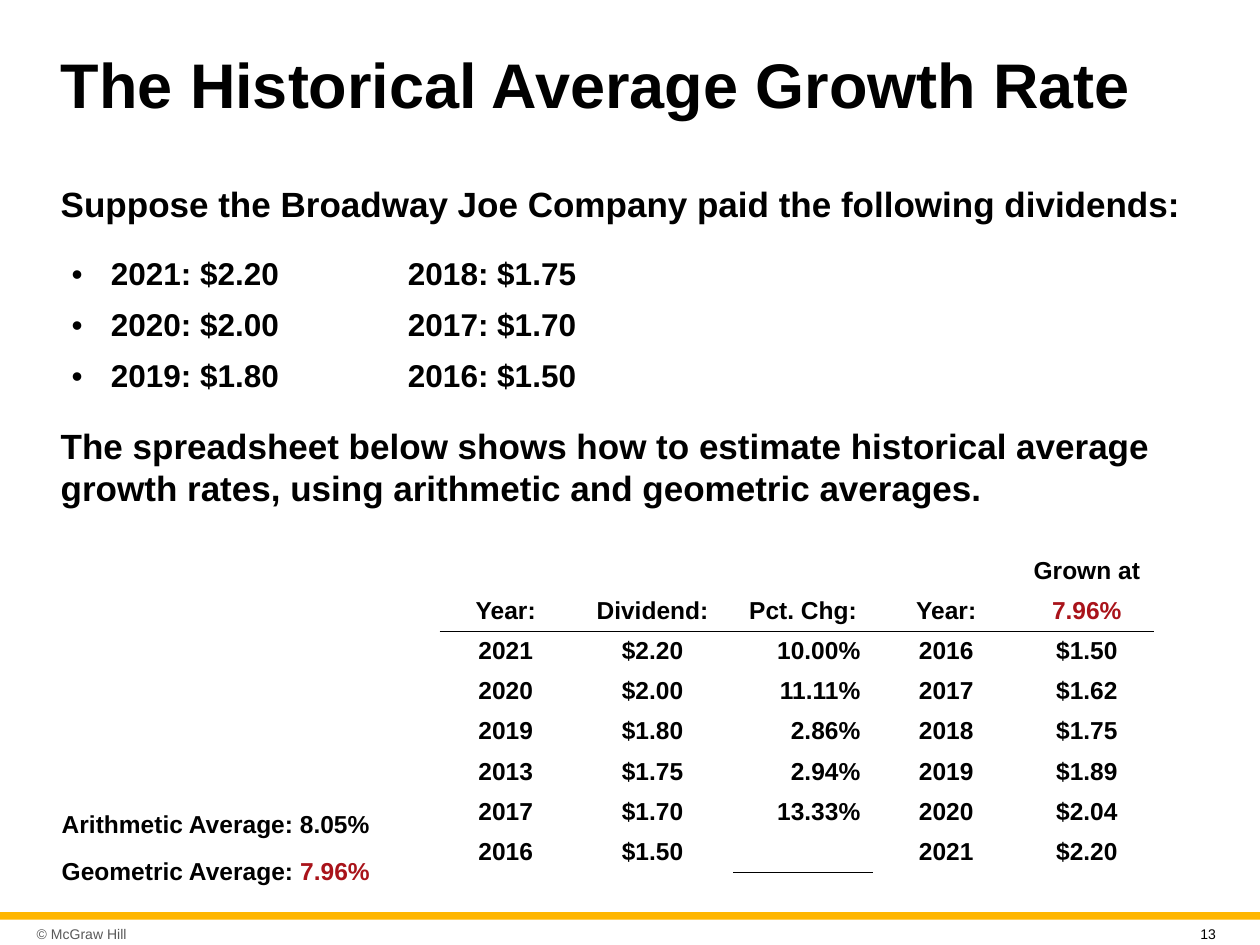
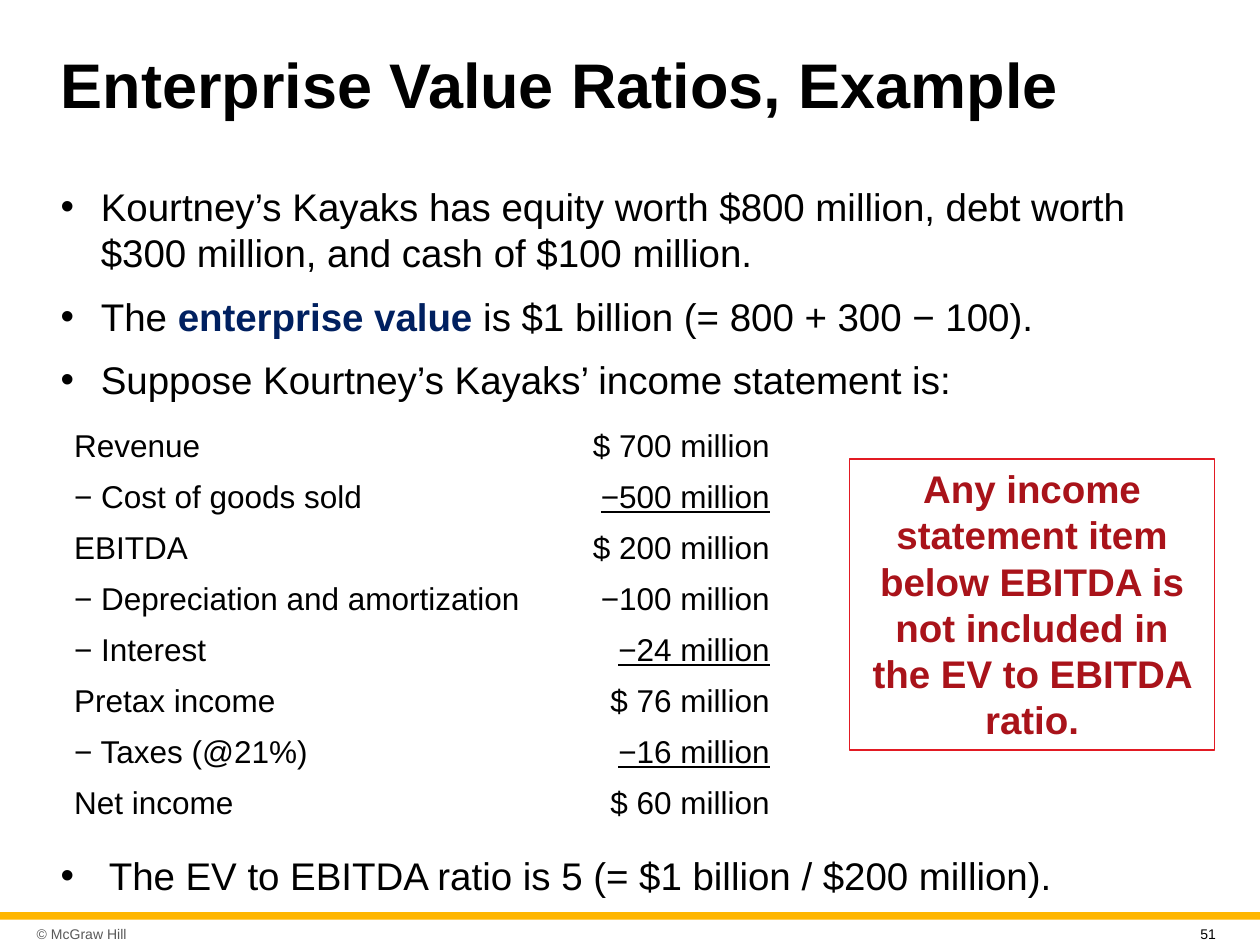
from dataclasses import dataclass

from lxml import etree
from pptx import Presentation
from pptx.dml.color import RGBColor
from pptx.enum.shapes import MSO_SHAPE
from pptx.enum.text import MSO_ANCHOR, MSO_AUTO_SIZE, PP_ALIGN
from pptx.oxml.ns import qn
from pptx.util import Cm, Pt

LEFT, CENTER, RIGHT = PP_ALIGN.LEFT, PP_ALIGN.CENTER, PP_ALIGN.RIGHT
TOP, MIDDLE = MSO_ANCHOR.TOP, MSO_ANCHOR.MIDDLE
COMPARISON_LAYOUT = 4
PLAIN_TABLE_STYLE = "{2D5ABB26-0587-4C30-8999-92F81FD0307C}"


@dataclass(frozen=True)
class Theme:
    font: str = "Arial"
    text: str = "000000"
    white: str = "FFFFFF"
    red: str = "A9131A"
    frame: str = "E21A23"
    navy: str = "002060"
    gold: str = "FFB600"
    gray: str = "595959"
    title_size: int = 36
    bullet_size: int = 22
    lead_size: int = 20
    table_size: int = 18
    small_size: int = 14
    footer_size: int = 8


theme = Theme()


def write(paragraph, text, size, color=theme.text, bold=False, underline=False,
          accent=None, align=LEFT, indent=None, line_spacing=1.0, space_before=0):
    """Fill a paragraph; parts between bars are bold in the accent colour."""
    paragraph.alignment = align
    paragraph.space_before = Pt(space_before)
    paragraph.line_spacing = line_spacing
    properties = paragraph._p.get_or_add_pPr()
    margin = Cm(indent or 0)
    properties.set("marL", str(margin))
    properties.set("indent", str(-margin))
    if indent:
        etree.SubElement(properties, qn("a:buFont"), typeface=theme.font)
        etree.SubElement(properties, qn("a:buChar"), char="•")
    else:
        etree.SubElement(properties, qn("a:buNone"))
    if not text:
        etree.SubElement(paragraph._p, qn("a:endParaRPr"), sz=str(size * 100))
        return
    for position, part in enumerate(text.split("|")):
        if not part:
            continue
        accented = position % 2 == 1
        run = paragraph.add_run()
        run.text = part
        run.font.name = theme.font
        run.font.size = Pt(size)
        run.font.bold = bold or accented
        run.font.underline = underline
        run.font.color.rgb = RGBColor.from_string(accent if accented else color)


def add_plain_table(slide, left, top, widths, row_height, rows, size, bold=False,
                    aligns=None, indent=None, padding=0.13, anchor=TOP,
                    underlined=(), ruled=()):
    """Add a white table; underlined and ruled hold (row, column) pairs."""
    graphic = slide.shapes.add_table(len(rows), len(widths), Cm(left), Cm(top),
                                     Cm(sum(widths)), Cm(row_height * len(rows)))
    table = graphic.table
    table.first_row = table.horz_banding = False
    table._tbl.tblPr.find(qn("a:tableStyleId")).text = PLAIN_TABLE_STYLE
    for column, width in zip(table.columns, widths):
        column.width = Cm(width)
    for row_number, row in enumerate(rows):
        table.rows[row_number].height = Cm(row_height)
        for column_number, text in enumerate(row):
            place = (row_number, column_number)
            cell = table.cell(*place)
            cell.fill.solid()
            cell.fill.fore_color.rgb = RGBColor.from_string(theme.white)
            cell.margin_top = cell.margin_bottom = Cm(padding)
            cell.vertical_anchor = anchor
            write(cell.text_frame.paragraphs[0], text, size, bold=bold,
                  accent=theme.red, underline=place in underlined,
                  align=aligns(*place) if aligns else LEFT,
                  indent=indent if column_number == 0 else None)
            if place in ruled:
                rule = etree.Element(qn("a:lnB"), w=str(Pt(0.5)))
                fill = etree.SubElement(rule, qn("a:solidFill"))
                etree.SubElement(fill, qn("a:srgbClr"), val=theme.text)
                cell._tc.get_or_add_tcPr().insert(0, rule)


# Each body is a box (left, top, width, height), its paragraphs and their format.
lead = dict(size=theme.lead_size, bold=True)
growth_bodies = [
    ((0.97, 3.56, 23.5, 1.19),
     ["Suppose the Broadway Joe Company paid the following dividends:"], lead),
    ((0.97, 8.43, 23.5, 2.01),
     ["The spreadsheet below shows how to estimate historical average growth rates, "
      "using arithmetic and geometric averages."], lead),
    ((0.99, 16.18, 6.88, 1.93),
     ["Arithmetic Average: 8.05%", "Geometric Average: |7.96%|"],
     dict(size=theme.small_size, bold=True, accent=theme.red)),
]
ratio_bodies = [
    ((0.97, 3.56, 23.5, 4.67),
     ["Kourtney’s Kayaks has equity worth $800 million, debt worth $300 million, "
      "and cash of $100 million.",
      "The |enterprise value| is $1 billion (= 800 + 300 − 100).",
      "Suppose Kourtney’s Kayaks’ income statement is:"],
     dict(size=theme.bullet_size, indent=0.81, accent=theme.navy)),
    ((17.12, 9.25, 7.37, 5.87),
     ["Any income statement item below EBITDA is not included in the EV to EBITDA ratio."],
     dict(size=theme.bullet_size, color=theme.red, bold=True, align=CENTER)),
    ((0.97, 17.04, 23.29, 1.19),
     ["The EV to EBITDA ratio is 5 (= $1 billion / $200 million)."],
     dict(size=theme.bullet_size, indent=0.97)),
]

presentation = Presentation()
presentation.slide_width, presentation.slide_height = Cm(25.4), Cm(19.05)
slides = []

for title_text, page_number, bodies in [
    ("The Historical Average Growth Rate", "13", growth_bodies),
    ("Enterprise Value Ratios, Example", "51", ratio_bodies),
]:
    slide = presentation.slides.add_slide(presentation.slide_layouts[COMPARISON_LAYOUT])
    slides.append(slide)

    band = slide.shapes.add_shape(MSO_SHAPE.RECTANGLE, 0, Cm(18.39), Cm(25.4), Cm(0.15))
    band.shadow.inherit = False
    band.fill.solid()
    band.fill.fore_color.rgb = RGBColor.from_string(theme.gold)
    band.line.fill.background()

    copyright_box = slide.shapes.add_textbox(Cm(0.61), Cm(18.52), Cm(3.43), Cm(0.61))
    frame = copyright_box.text_frame
    frame.word_wrap = True
    frame.vertical_anchor = MIDDLE
    frame.margin_left = frame.margin_right = Cm(0.13)
    write(frame.paragraphs[0], "© McGraw Hill", theme.footer_size, theme.gray)

    number_box = slide.shapes.add_textbox(Cm(23.95), Cm(18.54), Cm(0.99), Cm(0.46))
    number_box.text_frame.word_wrap = True
    write(number_box.text_frame.paragraphs[0], page_number, theme.footer_size)

    title, *placeholders, unused = slide.placeholders
    unused.element.getparent().remove(unused.element)
    title.left, title.top, title.width, title.height = map(Cm, (0.97, 0.53, 23.5, 2.51))
    title.text_frame.vertical_anchor = MIDDLE
    title.text_frame.auto_size = MSO_AUTO_SIZE.NONE
    write(title.text_frame.paragraphs[0], title_text, theme.title_size, bold=True,
          line_spacing=0.9)

    for body, (box, texts, text_format) in zip(placeholders, bodies):
        body.left, body.top, body.width, body.height = map(Cm, box)
        frame = body.text_frame
        frame.vertical_anchor = TOP
        frame.auto_size = MSO_AUTO_SIZE.NONE
        for position, text in enumerate(texts):
            paragraph = frame.add_paragraph() if position else frame.paragraphs[0]
            write(paragraph, text, space_before=10 if position else 0, **text_format)

growth_slide, ratio_slide = slides

# Dividends and their growth
add_plain_table(growth_slide, 1.19, 5.05, [6.78, 4.37], 1.03, [
    ("2021: $2.20", "2018: $1.75"),
    ("2020: $2.00", "2017: $1.70"),
    ("2019: $1.80", "2016: $1.50"),
], theme.table_size, bold=True, indent=0.79)

growth_rows = [
    ("", "", "", "", "Grown at"),
    ("Year:", "Dividend:", "Pct. Chg:", "Year:", "|7.96%|"),
    ("2021", "$2.20", "10.00%", "2016", "$1.50"),
    ("2020", "$2.00", "11.11%", "2017", "$1.62"),
    ("2019", "$1.80", "2.86%", "2018", "$1.75"),
    ("2013", "$1.75", "2.94%", "2019", "$1.89"),
    ("2017", "$1.70", "13.33%", "2020", "$2.04"),
    ("2016", "$1.50", "", "2021", "$2.20"),
]
add_plain_table(
    growth_slide, 8.86, 11.1, [2.67, 3.25, 2.82, 2.95, 2.72], 0.81, growth_rows,
    theme.small_size, bold=True, padding=0.1, anchor=MIDDLE,
    aligns=lambda row, column: RIGHT if row > 1 and column == 2 else CENTER,
    ruled=[(1, column) for column in range(5)] + [(7, 2)])

# Income statement and its note
add_plain_table(ratio_slide, 1.24, 8.51, [9.73, 4.8], 1.03, [
    ("Revenue", "$ 700 million"),
    ("− Cost of goods sold", "−500 million"),
    ("EBITDA", "$ 200 million"),
    ("− Depreciation and amortization", "−100 million"),
    ("− Interest", "−24 million"),
    ("Pretax income", "$ 76 million"),
    ("− Taxes (@21%)", "−16 million"),
    ("Net income", "$ 60 million"),
], theme.table_size, aligns=lambda row, column: RIGHT if column else LEFT,
    underlined=[(1, 1), (4, 1), (6, 1)])

ebitda_note = ratio_slide.placeholders[2]
ebitda_note.fill.solid()
ebitda_note.fill.fore_color.rgb = RGBColor.from_string(theme.white)
ebitda_note.line.color.rgb = RGBColor.from_string(theme.frame)
ebitda_note.line.width = Pt(0.75)

presentation.save("out.pptx")
